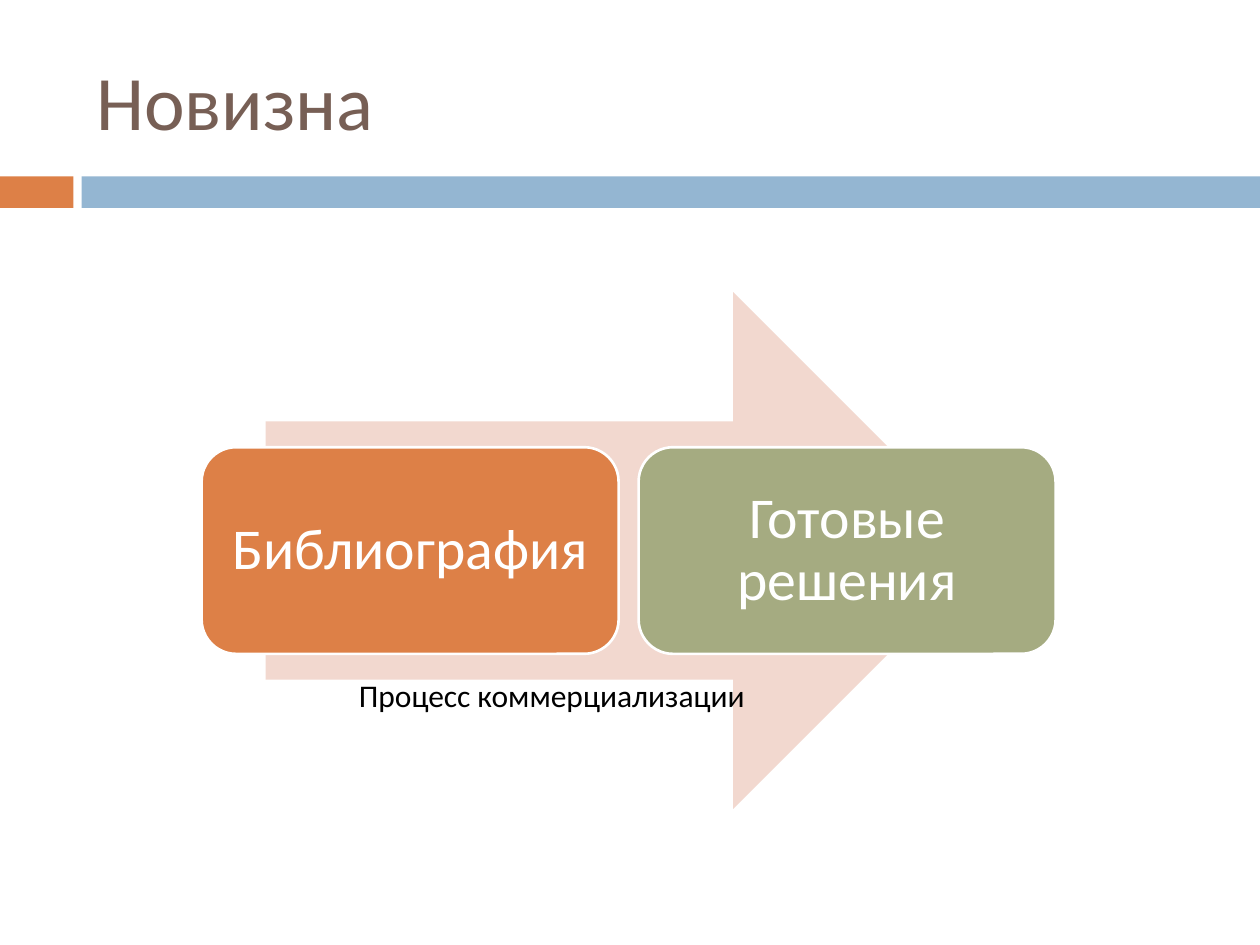
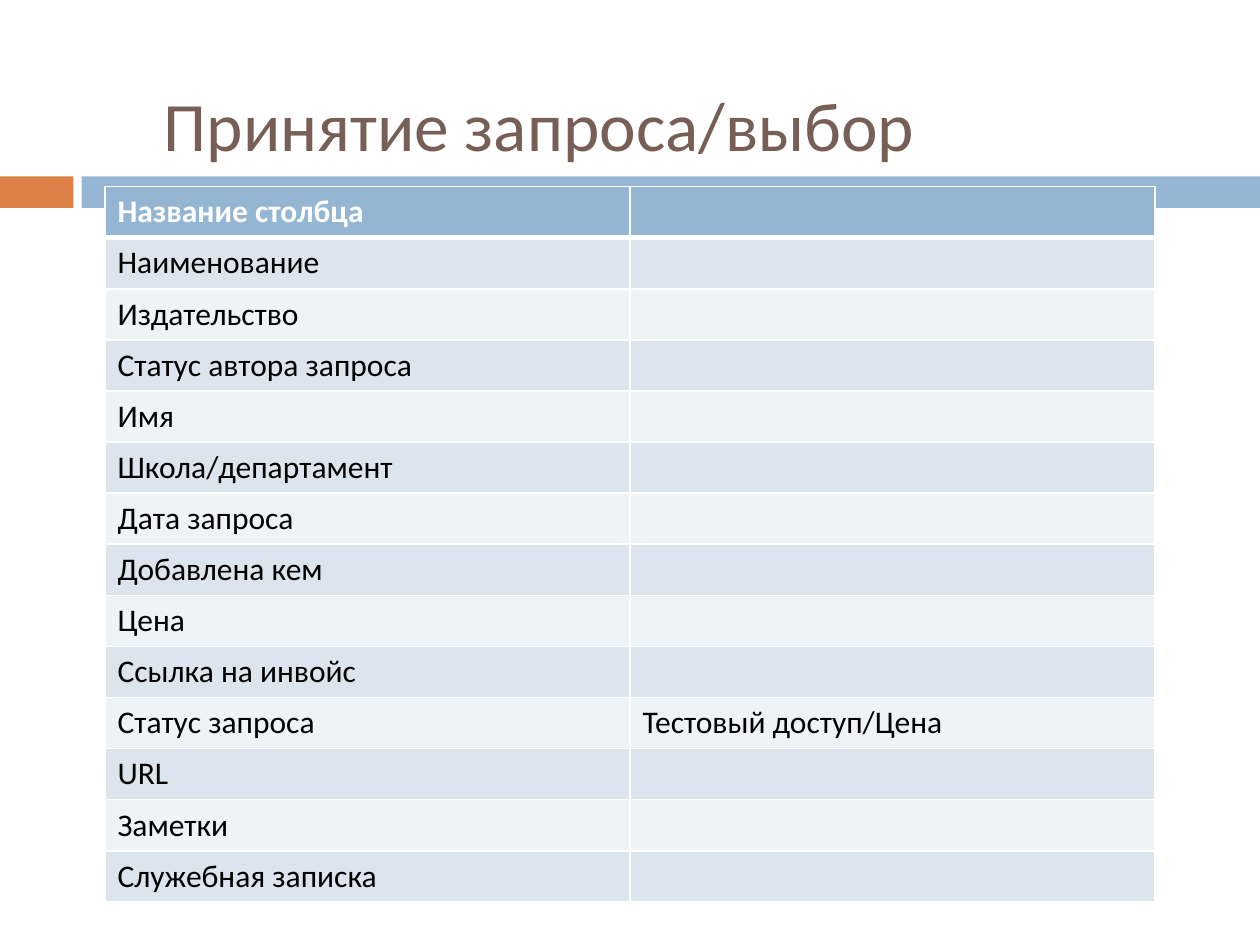
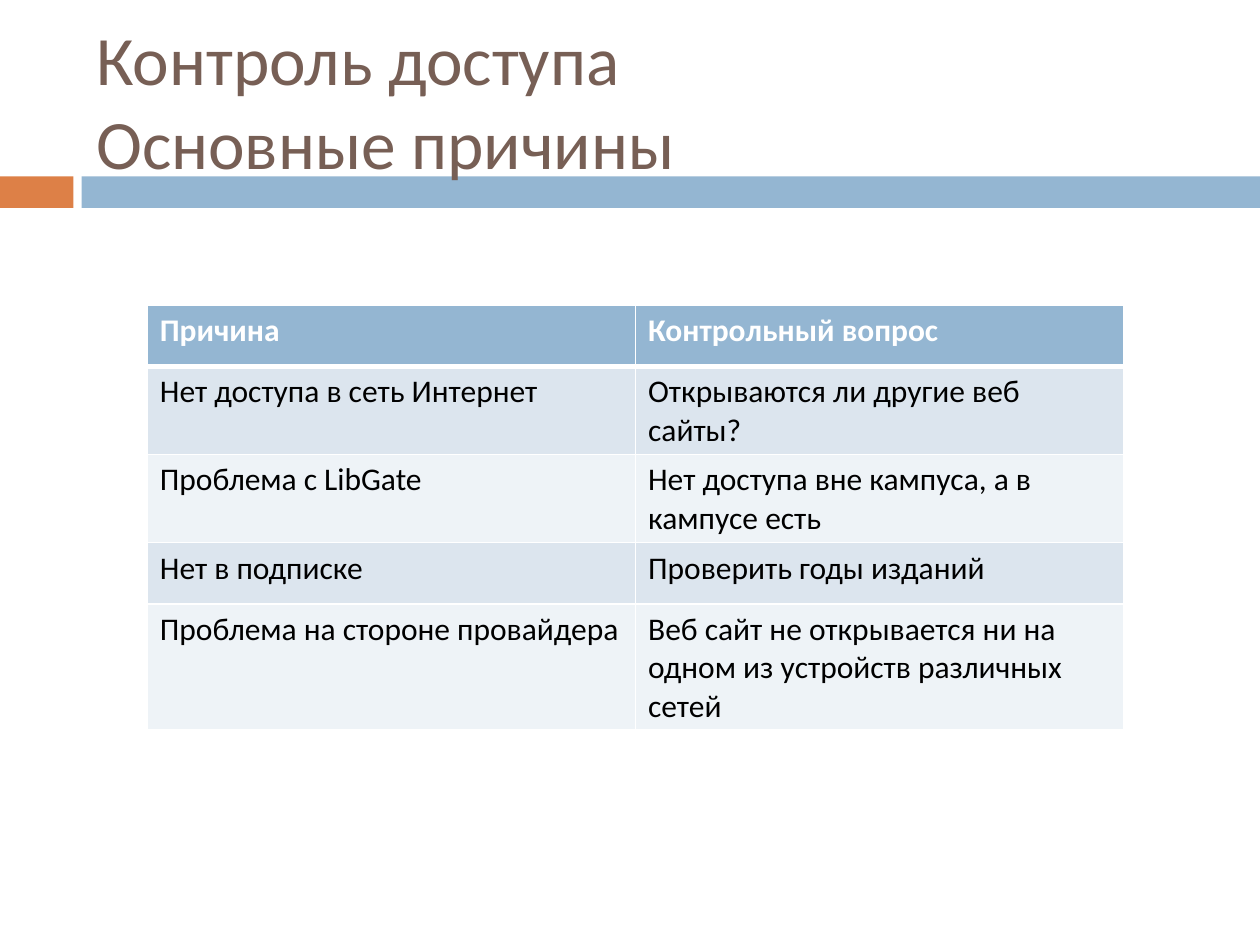
from pptx import Presentation
from pptx.dml.color import RGBColor
from pptx.enum.shapes import MSO_SHAPE as Preset
from pptx.enum.text import MSO_ANCHOR as Anchor, PP_ALIGN as Align
from pptx.oxml.ns import qn
from pptx.util import Pt
from lxml.etree import SubElement

FONT = "Calibri"
WHITE, BLACK, BROWN = "FFFFFF", "000000", "775F55"
ORANGE, BLUE, GREEN, PINK = "DD8047", "94B6D2", "A5AB81", "F2D8CF"
BAND_FILLS = ("DCE5EE", "EEF3F7")

SLIDE_W, SLIDE_H = 720, 540
TITLE_BOX = (48, 18, 642, 78)

REQUEST_ROWS = [
    ("Название столбца", ""),
    ("Наименование", ""),
    ("Издательство", ""),
    ("Статус автора запроса", ""),
    ("Имя", ""),
    ("Школа/департамент", ""),
    ("Дата запроса", ""),
    ("Добавлена кем", ""),
    ("Цена", ""),
    ("Ссылка на инвойс", ""),
    ("Статус запроса", "Тестовый доступ/Цена"),
    ("URL", ""),
    ("Заметки", ""),
    ("Служебная записка", ""),
]
CAUSE_ROWS = [
    ("Причина", "Контрольный вопрос"),
    ("Нет доступа в сеть Интернет", "Открываются ли другие веб сайты?"),
    ("Проблема с LibGate", "Нет доступа вне кампуса, а в кампусе есть"),
    ("Нет в подписке", "Проверить годы изданий"),
    ("Проблема на стороне провайдера",
     "Веб сайт не открывается ни на одном из устройств различных сетей"),
]


def color(value):
    return RGBColor.from_string(value)


def points(box):
    return [Pt(length) for length in box]


def add_run(paragraph, text, size, fill, bold=False):
    run = paragraph.add_run()
    run.text = text
    run.font.name = FONT
    run.font.size = Pt(size)
    run.font.bold = bold
    run.font.color.rgb = color(fill)


def add_block(slide, preset, box, fill, outline=None):
    block = slide.shapes.add_shape(preset, *points(box))
    block.shadow.inherit = False
    block.fill.solid()
    block.fill.fore_color.rgb = color(fill)
    if outline:
        block.line.color.rgb = color(outline)
        block.line.width = Pt(1.5)
    else:
        block.line.fill.background()
    return block


def add_title(slide, box, lines, size):
    frame = slide.shapes.add_textbox(*points(box)).text_frame
    frame.word_wrap = True
    frame.vertical_anchor = Anchor.MIDDLE
    heading = frame.paragraphs[0]
    for index, line in enumerate(lines):
        if index:
            heading.add_line_break()
        add_run(heading, line, size, BROWN)


def new_slide(deck, title, size=39.6, title_box=TITLE_BOX):
    """Add a blank slide with the divider band and its title."""
    slide = deck.slides.add_slide(deck.slide_layouts[6])
    top, height, accent_w, band_left = 100.8, 18, 42, 46.6
    add_block(slide, Preset.RECTANGLE, (0, top, accent_w, height), ORANGE)
    add_block(slide, Preset.RECTANGLE,
              (band_left, top, SLIDE_W - band_left, height), BLUE)
    add_title(slide, title_box, title, size)
    return slide


def add_process(slide, box, stages):
    """Place equal stages across the box, over an arrow that fills its height."""
    left, top, width, height = box
    arrow_w, gap, stage_h = 0.85 * width, 11.4, 0.4 * height
    stage_w = (width - gap * (len(stages) - 1)) / len(stages)
    add_block(slide, Preset.RIGHT_ARROW,
              (left + (width - arrow_w) / 2, top, arrow_w, height), PINK)
    for index, (label, fill) in enumerate(stages):
        stage_box = (left + index * (stage_w + gap),
                     top + (height - stage_h) / 2, stage_w, stage_h)
        stage = add_block(slide, Preset.ROUNDED_RECTANGLE, stage_box, fill, WHITE)
        frame = stage.text_frame
        frame.word_wrap = True
        frame.vertical_anchor = Anchor.MIDDLE
        frame.margin_left = frame.margin_right = Pt(10)
        frame.margin_top = frame.margin_bottom = Pt(10)
        paragraph = frame.paragraphs[0]
        paragraph.alignment = Align.CENTER
        paragraph.line_spacing = 0.9
        add_run(paragraph, label, 33, WHITE)


def add_caption(slide, box, text):
    frame = slide.shapes.add_textbox(*points(box)).text_frame
    frame.word_wrap = False
    add_run(frame.paragraphs[0], text, 18, BLACK)


def set_borders(cell, top, bottom):
    properties = cell._tc.get_or_add_tcPr()
    for side, width in (("L", 1), ("R", 1), ("T", top), ("B", bottom)):
        border = SubElement(properties, qn(f"a:ln{side}"), w=str(Pt(width)))
        fill = SubElement(border, qn("a:solidFill"))
        SubElement(fill, qn("a:srgbClr"), val=WHITE)


def add_grid(slide, box, rows):
    """Fill the box with a table: a header row, then alternating bands."""
    left, top, width, height = box
    grid = slide.shapes.add_table(len(rows), len(rows[0]), *points(box)).table
    for column in grid.columns:
        column.width = Pt(width / len(rows[0]))
    for index, texts in enumerate(rows):
        header = index == 0
        grid.rows[index].height = Pt(height / len(rows))
        for cell, text in zip(grid.rows[index].cells, texts):
            set_borders(cell, 3 if index == 1 else 1, 3 if header else 1)
            cell.fill.solid()
            cell.fill.fore_color.rgb = color(
                BLUE if header else BAND_FILLS[(index - 1) % 2])
            if text:
                add_run(cell.text_frame.paragraphs[0], text, 18,
                        WHITE if header else BLACK, header)


def main():
    deck = Presentation()
    deck.slide_width, deck.slide_height = Pt(SLIDE_W), Pt(SLIDE_H)

    novelty = new_slide(deck, ["Новизна"], 44)
    add_process(novelty, (115.2, 167, 488, 295.2),
                [("Библиография", ORANGE), ("Готовые решения", GREEN)])
    add_caption(novelty, (198, 383, 255, 29), "Процесс коммерциализации")

    request = new_slide(deck, ["Принятие запроса/выбор"],
                        title_box=(86.4, 46, 548.6, 50))
    add_grid(request, (60, 106.6, 600, 408.8), REQUEST_ROWS)

    access = new_slide(deck, ["Контроль доступа", "Основные причины"])
    add_grid(access, (84.2, 174.2, 558, 175.5), CAUSE_ROWS)

    deck.save("out.pptx")


if __name__ == "__main__":
    main()
